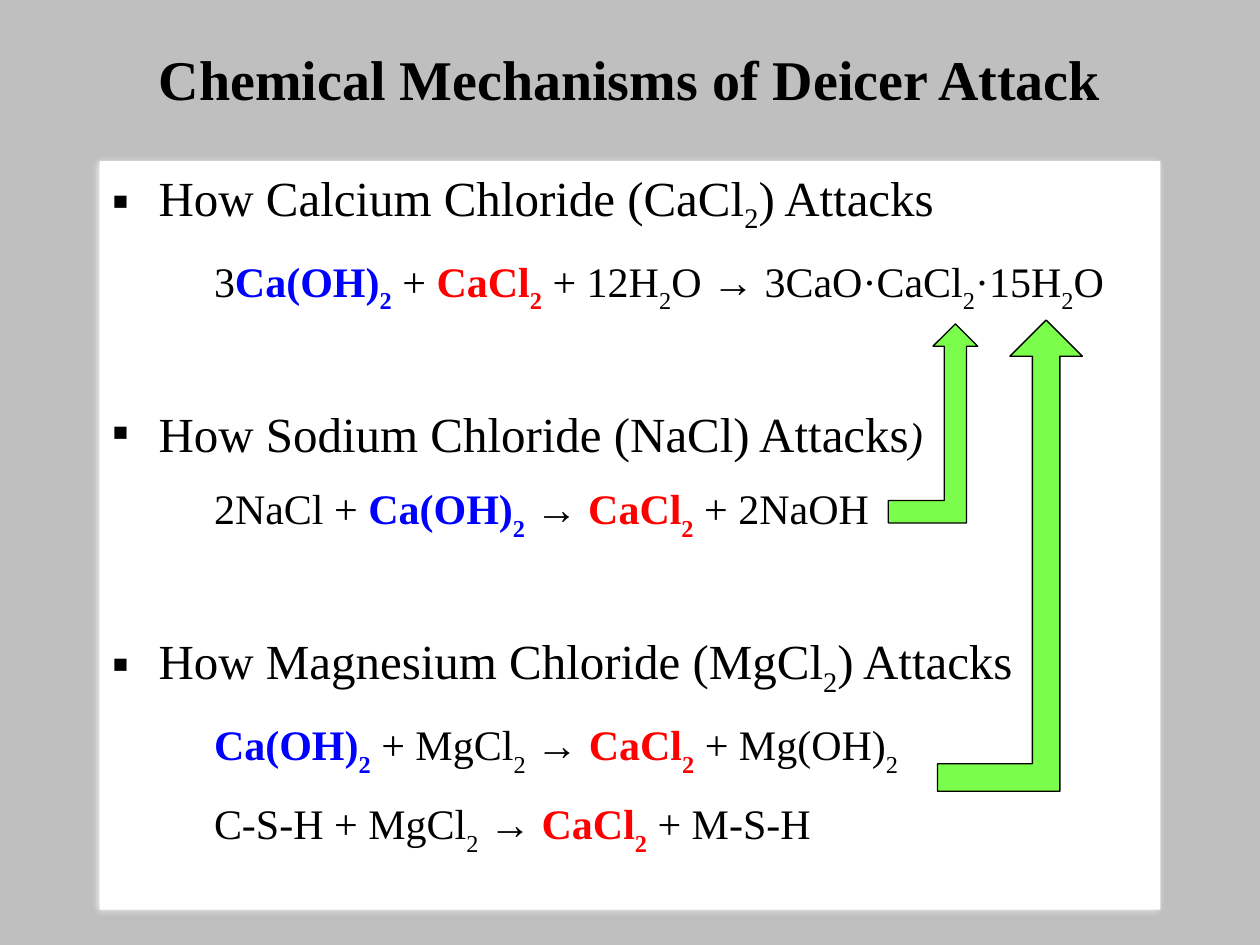
from lxml import etree
from pptx import Presentation
from pptx.dml.color import RGBColor
from pptx.enum.shapes import MSO_SHAPE as SHAPE
from pptx.enum.text import MSO_ANCHOR as ANCHOR, PP_ALIGN as ALIGN
from pptx.oxml.ns import qn
from pptx.util import Inches, Pt

BLACK = RGBColor(0x00, 0x00, 0x00)
WHITE = RGBColor(0xFF, 0xFF, 0xFF)
GRAY = RGBColor(0xBF, 0xBF, 0xBF)
BLUE = RGBColor(0x00, 0x00, 0xFF)
RED = RGBColor(0xFF, 0x00, 0x00)
GREEN = RGBColor(0x7A, 0xFD, 0x4B)
FONT = "Times New Roman"

prs = Presentation()
prs.slide_width, prs.slide_height = Inches(10), Inches(7.5)
s = prs.slides.add_slide(prs.slide_layouts[6])


def add_shape(kind, box, fill, line=None):
    sp = s.shapes.add_shape(kind, *[Inches(v) for v in box])
    sp.shadow.inherit = False
    sp.fill.solid()
    sp.fill.fore_color.rgb = fill
    if line is None:
        sp.line.fill.background()
    else:
        sp.line.color.rgb = line
        sp.line.width = Pt(0.75)
    return sp


def add_run(p, text, size, color=BLACK, bold=False, italic=False, base=0):
    r = p.add_run()
    r.text = text
    f = r.font
    f.name, f.size, f.bold, f.italic = FONT, Pt(size), bold, italic
    f.color.rgb = color
    if base:
        r._r.get_or_add_rPr().set("baseline", str(base * 1000))


# Background
add_shape(SHAPE.RECTANGLE, (0, 0, 10, 7.5), GRAY)

# Title
sp = s.shapes.add_textbox(Inches(0.5), Inches(0.3), Inches(9), Inches(0.85))
tf = sp.text_frame
tf.word_wrap = True
p = tf.paragraphs[0]
p.alignment = ALIGN.CENTER
add_run(p, "Chemical Mechanisms of Deicer Attack", 32, bold=True)

# White panel with a soft shadow
panel = add_shape(SHAPE.RECTANGLE, (0.79, 1.28, 8.42, 5.94), WHITE)
effects = panel._element.spPr.find(qn("a:effectLst"))
shadow = etree.SubElement(effects, qn("a:outerShdw"), blurRad=str(Pt(4)),
                          dist=str(Pt(1)), dir="8100000", rotWithShape="0")
shadow_color = etree.SubElement(shadow, qn("a:srgbClr"), val=str(WHITE))
etree.SubElement(shadow_color, qn("a:alpha"), val="75000")

# Run styles, the two highlighted compounds and the reaction arrow
PLAIN = {}
HEAD_SUB = {"base": -25}
SUB = {"base": -30}
CAOH = {"color": BLUE, "bold": True}
CACL = {"color": RED, "bold": True}
HYDROXIDE = [("Ca(OH)", CAOH), ("2", CAOH | SUB)]
CHLORIDE = [("CaCl", CACL), ("2", CACL | SUB)]
ARROW = (" → ", PLAIN)

# Each section: heading runs, then its reactions
sections = [
    ([("How Calcium Chloride (CaCl", PLAIN), ("2", HEAD_SUB), (") Attacks", PLAIN)],
     [[("3", PLAIN), *HYDROXIDE, (" + ", PLAIN), *CHLORIDE, (" + 12H", PLAIN),
       ("2", SUB), ("O → 3CaO·CaCl", PLAIN), ("2", SUB), ("·15H", PLAIN),
       ("2", SUB), ("O", PLAIN)]]),
    ([("How Sodium Chloride (NaCl) Attacks", PLAIN),
      (")", {"size": 24, "italic": True})],
     [[("2NaCl + ", PLAIN), *HYDROXIDE, ARROW, *CHLORIDE, (" + 2NaOH", PLAIN)]]),
    ([("How Magnesium Chloride (MgCl", PLAIN), ("2", HEAD_SUB), (") Attacks", PLAIN)],
     [[*HYDROXIDE, (" + MgCl", PLAIN), ("2", SUB), ARROW, *CHLORIDE,
       (" + Mg(OH)", PLAIN), ("2", SUB)],
      [("C-S-H + MgCl", PLAIN), ("2", SUB), ARROW, *CHLORIDE, (" + M-S-H", PLAIN)]]),
]

# Headings and reactions
tf = panel.text_frame
tf.word_wrap = True
tf.vertical_anchor = ANCHOR.TOP
for i, (heading, reactions) in enumerate(sections):
    for j, runs in enumerate([heading, *reactions]):
        p = tf.paragraphs[0] if i == j == 0 else tf.add_paragraph()
        p.alignment = ALIGN.LEFT
        p.space_after = Pt(5)
        pPr = p._p.get_or_add_pPr()
        if j == 0:
            size = 28
            p.space_before = Pt(45.5 if i else 0)
            pPr.set("marL", str(Inches(0.37)))
            pPr.set("indent", str(Inches(-0.37)))
            color = etree.SubElement(pPr, qn("a:buClr"))
            etree.SubElement(color, qn("a:srgbClr"), val=str(BLACK))
            etree.SubElement(pPr, qn("a:buFont"), typeface=FONT)
            etree.SubElement(pPr, qn("a:buChar"), char="▪")
        else:
            size = 24
            p.level = 1
            p.space_before = Pt(7 if j == 1 else 6)
            pPr.set("marL", str(Inches(0.81)))
            pPr.set("indent", "0")
            etree.SubElement(pPr, qn("a:buNone"))
        for text, style in runs:
            add_run(p, text, **({"size": size} | style))

# Arrows feeding calcium chloride back into the first reaction
for box, stem in [((7.05, 2.57, 0.71, 1.58), 0.25), ((7.44, 2.54, 1.15, 3.74), 0.19)]:
    sp = add_shape(SHAPE.BENT_UP_ARROW, box, GREEN, BLACK)
    sp.adjustments[0] = stem

prs.save("out.pptx")
